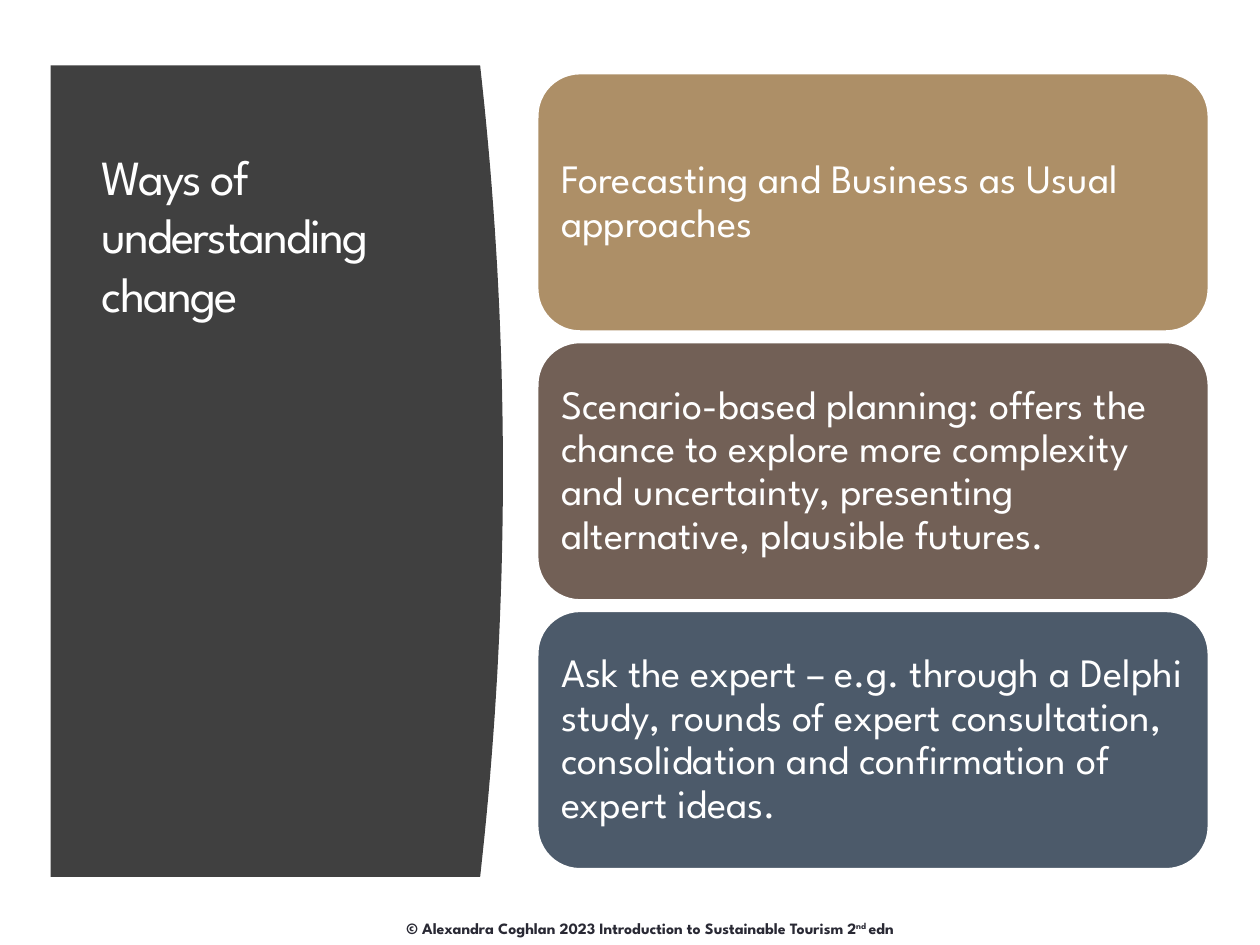
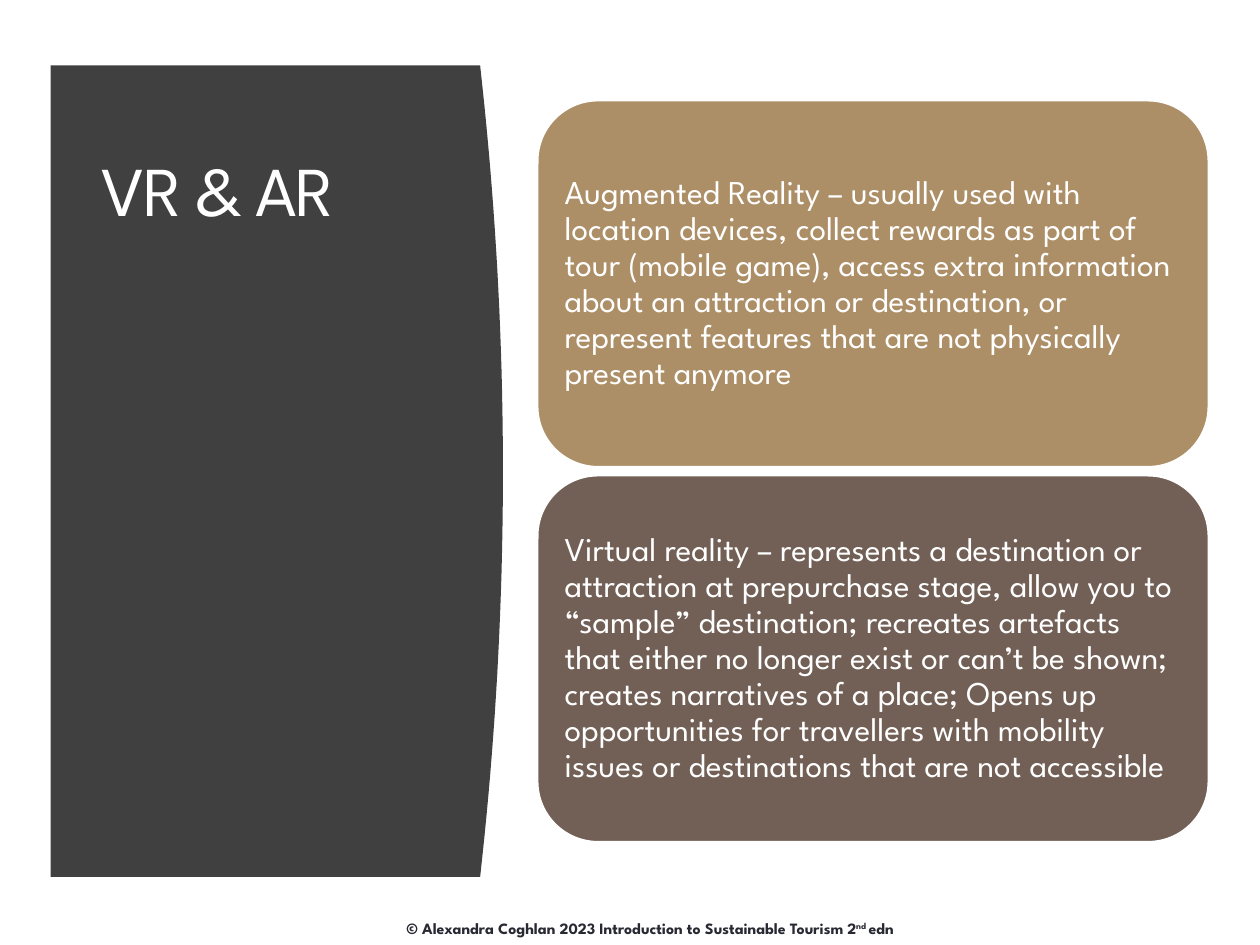
from pptx import Presentation
from pptx.dml.color import RGBColor
from pptx.enum.shapes import MSO_SHAPE
from pptx.enum.text import MSO_ANCHOR, PP_ALIGN
from pptx.util import Cm, Pt

FONT = "League Spartan"
WHITE, INK, PANEL = "FFFFFF", "292934", "404040"
CARD_COLOURS = ["AD8F67", "726056", "4C5A6A"]

PANEL_LEFT, PANEL_TOP = 1.02, 1.32
PANEL_WIDTH, PANEL_HEIGHT, PANEL_BULGE = 8.66, 16.36, 0.46
CURVE_STEPS = 40
CARD_LEFT, CARD_WIDTH = 10.82, 13.56
STACK_CENTRE = PANEL_TOP + PANEL_HEIGHT / 2

SLIDES = [
    {
        "title": "Ways of understanding change",
        "title_size": 28,
        "card_size": 23,
        "card_height": 5.23,
        "gap": 0.19,
        "margin": 0.24,
        "cards": [
            "Forecasting and Business as Usual approaches",
            "Scenario-based planning: offers the chance to explore more complexity "
            "and uncertainty, presenting alternative, plausible futures.",
            "Ask the expert – e.g. through a Delphi study, rounds of expert "
            "consultation, consolidation and confirmation of expert ideas.",
        ],
    },
    {
        "title": "VR & AR",
        "title_size": 40,
        "card_size": 19,
        "card_height": 7.42,
        "gap": 0.14,
        "margin": 0.2,
        "cards": [
            "Augmented Reality – usually used with location devices, collect rewards "
            "as part of tour (mobile game), access extra information about an "
            "attraction or destination, or represent features that are not "
            "physically present anymore",
            "Virtual reality – represents a destination or attraction at prepurchase "
            "stage, allow you to “sample” destination; recreates artefacts that "
            "either no longer exist or can’t be shown; creates narratives of a "
            "place; Opens up opportunities for travellers with mobility issues or "
            "destinations that are not accessible",
        ],
    },
]


def colour(hex_string):
    return RGBColor.from_string(hex_string)


def fill_shape(shape, hex_string):
    shape.shadow.inherit = False
    shape.fill.solid()
    shape.fill.fore_color.rgb = colour(hex_string)


def add_run(paragraph, text, size, hex_string, bold=False, **attributes):
    """Add a run; attributes are raw run properties such as spc or baseline."""
    run = paragraph.add_run()
    run.text = text
    run.font.name = FONT
    run.font.size = Pt(size)
    run.font.bold = bold
    run.font.color.rgb = colour(hex_string)
    for name, value in attributes.items():
        run._r.get_or_add_rPr().set(name, str(value))


def add_text_box(slide, left, top, width, height):
    """Add a wrapping text box and return its first paragraph."""
    box = slide.shapes.add_textbox(Cm(left), Cm(top), Cm(width), Cm(height))
    box.text_frame.word_wrap = True
    return box.text_frame.paragraphs[0]


def add_footer(slide):
    paragraph = add_text_box(slide, 7.11, 18.39, 11.99, 0.64)
    paragraph.alignment = PP_ALIGN.CENTER
    add_run(paragraph, "© Alexandra Coghlan 2023 Introduction to Sustainable Tourism 2",
            9, INK, bold=True)
    add_run(paragraph, "nd ", 9, INK, bold=True, baseline=30000)
    add_run(paragraph, "edn", 9, INK, bold=True)


def add_curved_panel(slide):
    """Draw the dark panel whose right edge bows outwards as a parabola."""
    edge = []
    for step in range(CURVE_STEPS + 1):
        share = step / CURVE_STEPS
        bow = PANEL_BULGE * 4 * share * (1 - share)
        edge.append((Cm(PANEL_LEFT + PANEL_WIDTH + bow),
                     Cm(PANEL_TOP + PANEL_HEIGHT * share)))
    builder = slide.shapes.build_freeform(Cm(PANEL_LEFT), Cm(PANEL_TOP))
    builder.add_line_segments(edge + [(Cm(PANEL_LEFT), Cm(PANEL_TOP + PANEL_HEIGHT))])
    panel = builder.convert_to_shape()
    fill_shape(panel, PANEL)
    panel.line.fill.background()


def add_title(slide, text, size):
    paragraph = add_text_box(slide, 1.8, 2.82, 7.11, 13.31)
    add_run(paragraph, text, size, WHITE, spc=-100)


def add_card(slide, text, top, height, size, margin, hex_string):
    card = slide.shapes.add_shape(MSO_SHAPE.ROUNDED_RECTANGLE, Cm(CARD_LEFT), Cm(top),
                                  Cm(CARD_WIDTH), Cm(height))
    fill_shape(card, hex_string)
    card.line.color.rgb = colour(WHITE)
    card.line.width = Pt(2.08)
    frame = card.text_frame
    frame.word_wrap = True
    frame.vertical_anchor = MSO_ANCHOR.MIDDLE
    frame.margin_left = frame.margin_right = Cm(margin)
    frame.margin_top = frame.margin_bottom = Cm(margin)
    paragraph = frame.paragraphs[0]
    paragraph.alignment = PP_ALIGN.LEFT
    paragraph.line_spacing = 0.9
    add_run(paragraph, text, size, WHITE)


def add_card_stack(slide, content):
    """Stack the cards at equal gaps, centred on the panel's height."""
    height, gap, cards = content["card_height"], content["gap"], content["cards"]
    pitch = height + gap
    first_top = STACK_CENTRE - (len(cards) * pitch - gap) / 2
    for index, (text, hex_string) in enumerate(zip(cards, CARD_COLOURS)):
        add_card(slide, text, first_top + index * pitch, height,
                 content["card_size"], content["margin"], hex_string)


def main():
    presentation = Presentation()
    presentation.slide_width = Cm(25.4)
    presentation.slide_height = Cm(19.05)
    for content in SLIDES:
        slide = presentation.slides.add_slide(presentation.slide_layouts[6])
        add_footer(slide)
        add_curved_panel(slide)
        add_title(slide, content["title"], content["title_size"])
        add_card_stack(slide, content)
    presentation.save("out.pptx")


if __name__ == "__main__":
    main()
